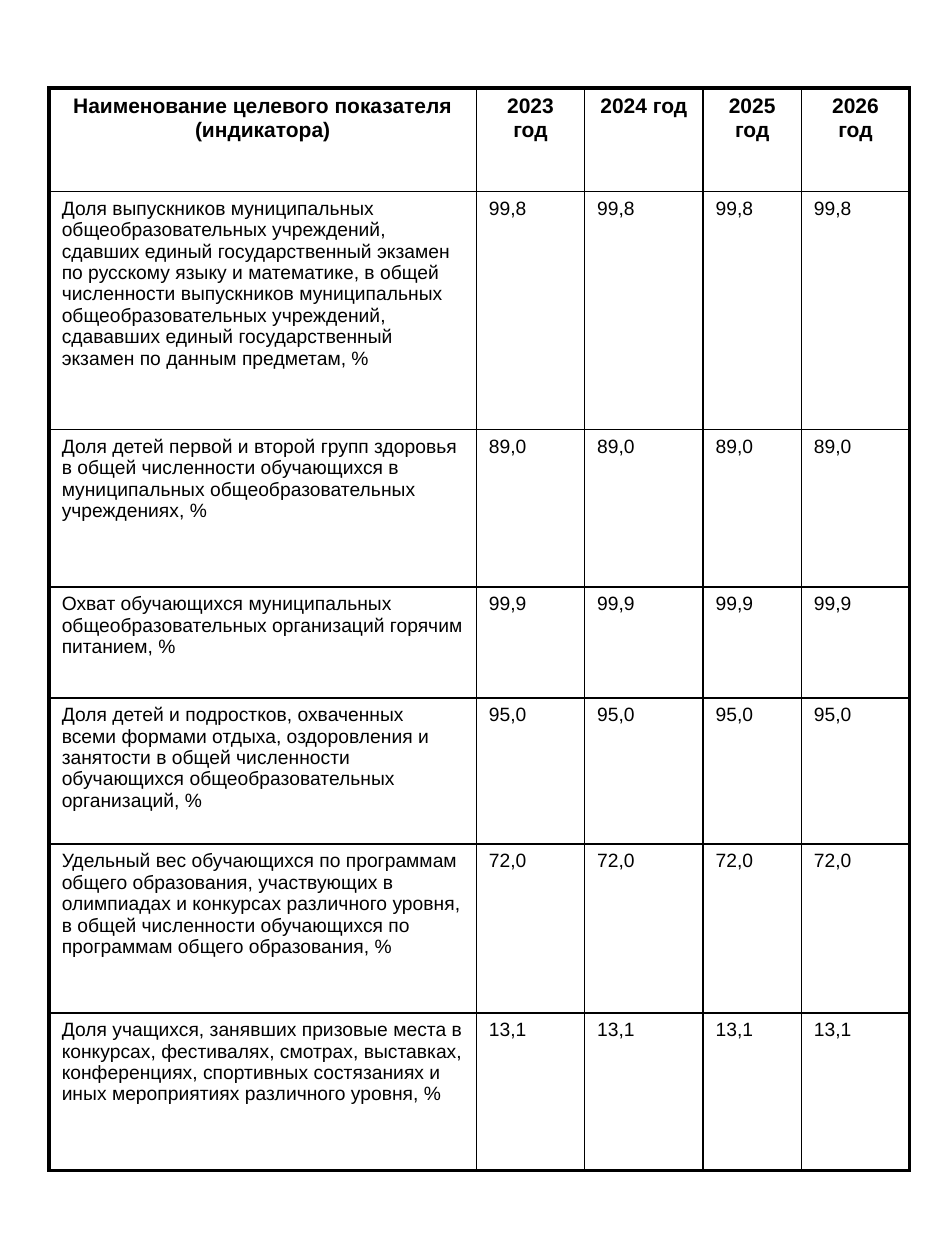
"""Build a one-page table of education target indicators for 2023–2026."""
from dataclasses import dataclass

from lxml.etree import SubElement
from pptx import Presentation
from pptx.dml.color import RGBColor
from pptx.enum.text import PP_ALIGN
from pptx.oxml.ns import qn
from pptx.util import Inches, Pt


@dataclass(frozen=True)
class Theme:
    font: str = "Arial"
    ink: str = "000000"
    header_size: float = 12
    body_size: float = 11
    inner_line: float = 1
    outer_line: float = 2.25


def add_border(cell, side, width):
    line = SubElement(cell._tc.get_or_add_tcPr(), qn(f"a:{side}"), w=str(Pt(width)))
    fill = SubElement(line, qn("a:solidFill"))
    SubElement(fill, qn("a:srgbClr"), val=theme.ink)


theme = Theme()
years = (2023, 2024, 2025, 2026)
indicators = [
    ("Доля выпускников муниципальных общеобразовательных учреждений, сдавших единый "
     "государственный экзамен по русскому языку и математике, в общей численности "
     "выпускников муниципальных общеобразовательных учреждений, сдававших единый "
     "государственный экзамен по данным предметам, %", "99,8"),
    ("Доля детей первой и второй групп здоровья в общей численности обучающихся в "
     "муниципальных общеобразовательных учреждениях, %", "89,0"),
    ("Охват обучающихся муниципальных общеобразовательных организаций горячим "
     "питанием, %", "99,9"),
    ("Доля детей и подростков, охваченных всеми формами отдыха, оздоровления и "
     "занятости в общей численности обучающихся общеобразовательных организаций, %", "95,0"),
    ("Удельный вес обучающихся по программам общего образования, участвующих в "
     "олимпиадах и конкурсах различного уровня, в общей численности обучающихся по "
     "программам общего образования, %", "72,0"),
    ("Доля учащихся, занявших призовые места в конкурсах, фестивалях, смотрах, "
     "выставках, конференциях, спортивных состязаниях и иных мероприятиях "
     "различного уровня, %", "13,1"),
]
header = ["Наименование целевого показателя (индикатора)"] + [f"{year} год" for year in years]
rows = [header] + [[name] + [value] * len(years) for name, value in indicators]
column_widths = (3.39, 0.86, 0.94, 0.78, 0.86)
row_heights = (0.82, 1.89, 1.25, 0.88, 1.16, 1.34, 1.25)

presentation = Presentation()
presentation.slide_width = Inches(7.5)
presentation.slide_height = Inches(10)
slide = presentation.slides.add_slide(presentation.slide_layouts[6])

indicator_table = slide.shapes.add_table(
    len(rows), len(header), Inches(0.39), Inches(0.7),
    Inches(sum(column_widths)), Inches(sum(row_heights)),
).table
indicator_table.first_row = False
indicator_table.horz_banding = False
for column, width in zip(indicator_table.columns, column_widths):
    column.width = Inches(width)
for row, height in zip(indicator_table.rows, row_heights):
    row.height = Inches(height)

last_row, last_column = len(rows) - 1, len(header) - 1
for row_index, row_texts in enumerate(rows):
    is_header = row_index == 0
    for column_index, cell_text in enumerate(row_texts):
        cell = indicator_table.cell(row_index, column_index)
        cell.margin_left = cell.margin_right = Inches(0.1)
        cell.margin_top = cell.margin_bottom = Inches(0.05)
        outer_sides = {
            "lnL": column_index == 0,
            "lnR": column_index == last_column,
            "lnT": is_header,
            "lnB": row_index == last_row,
        }
        for side, is_outer in outer_sides.items():
            add_border(cell, side, theme.outer_line if is_outer else theme.inner_line)
        cell.fill.background()

        paragraph = cell.text_frame.paragraphs[0]
        paragraph.alignment = PP_ALIGN.CENTER if is_header else PP_ALIGN.LEFT
        run = paragraph.add_run()
        run.text = cell_text
        run.font.name = theme.font
        run.font.size = Pt(theme.header_size if is_header else theme.body_size)
        run.font.bold = is_header
        run.font.color.rgb = RGBColor.from_string(theme.ink)

presentation.save("out.pptx")
